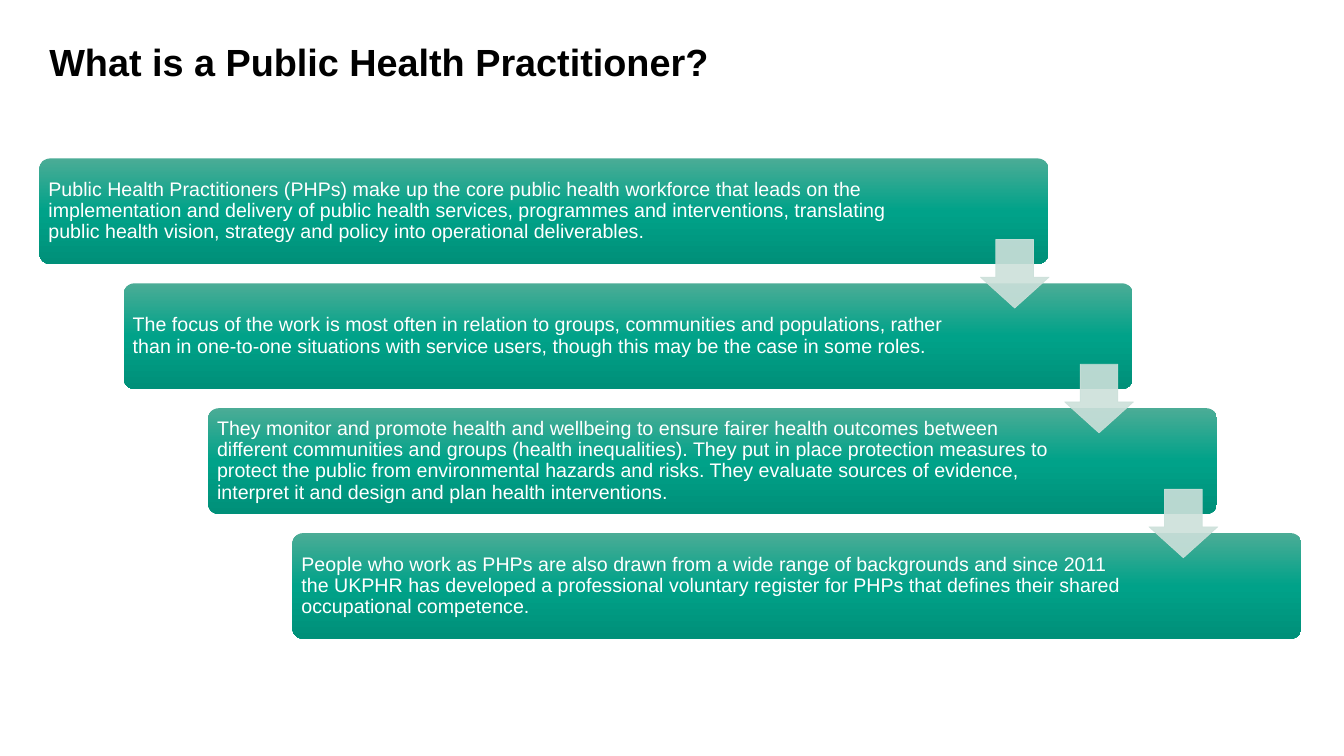
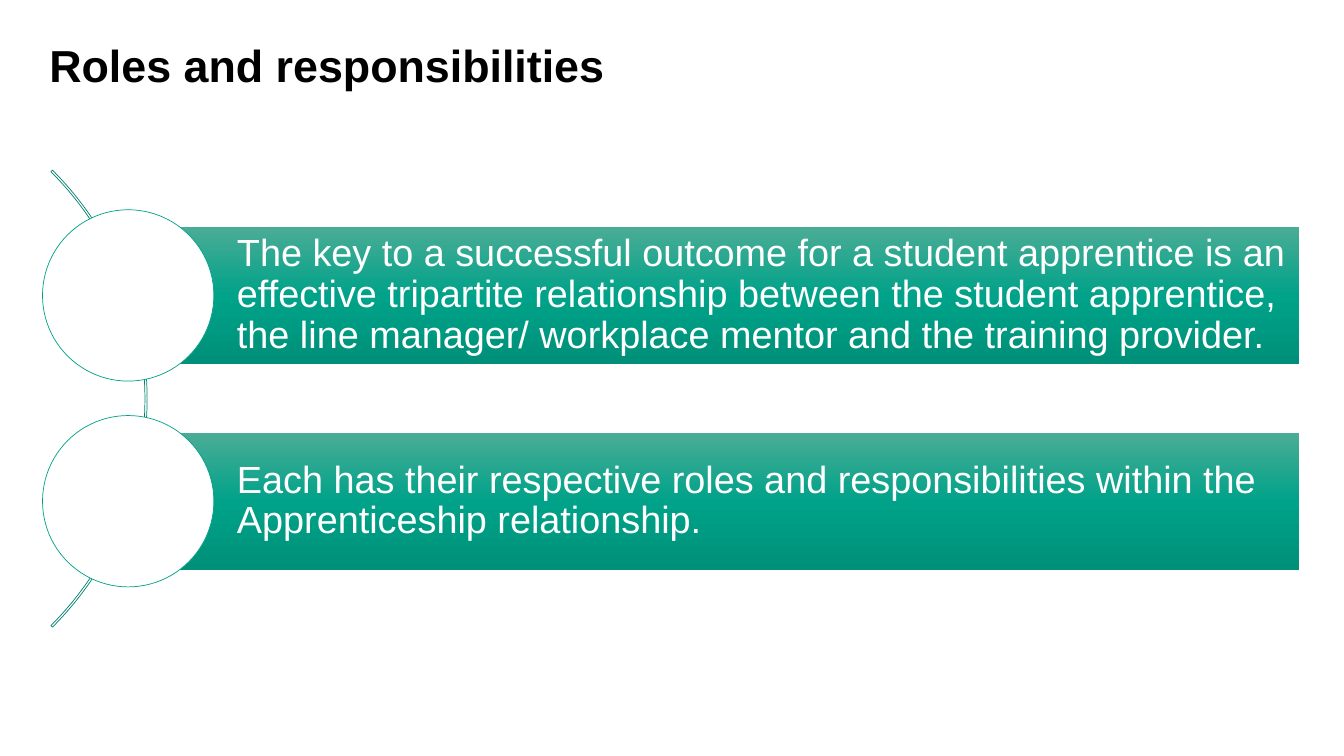
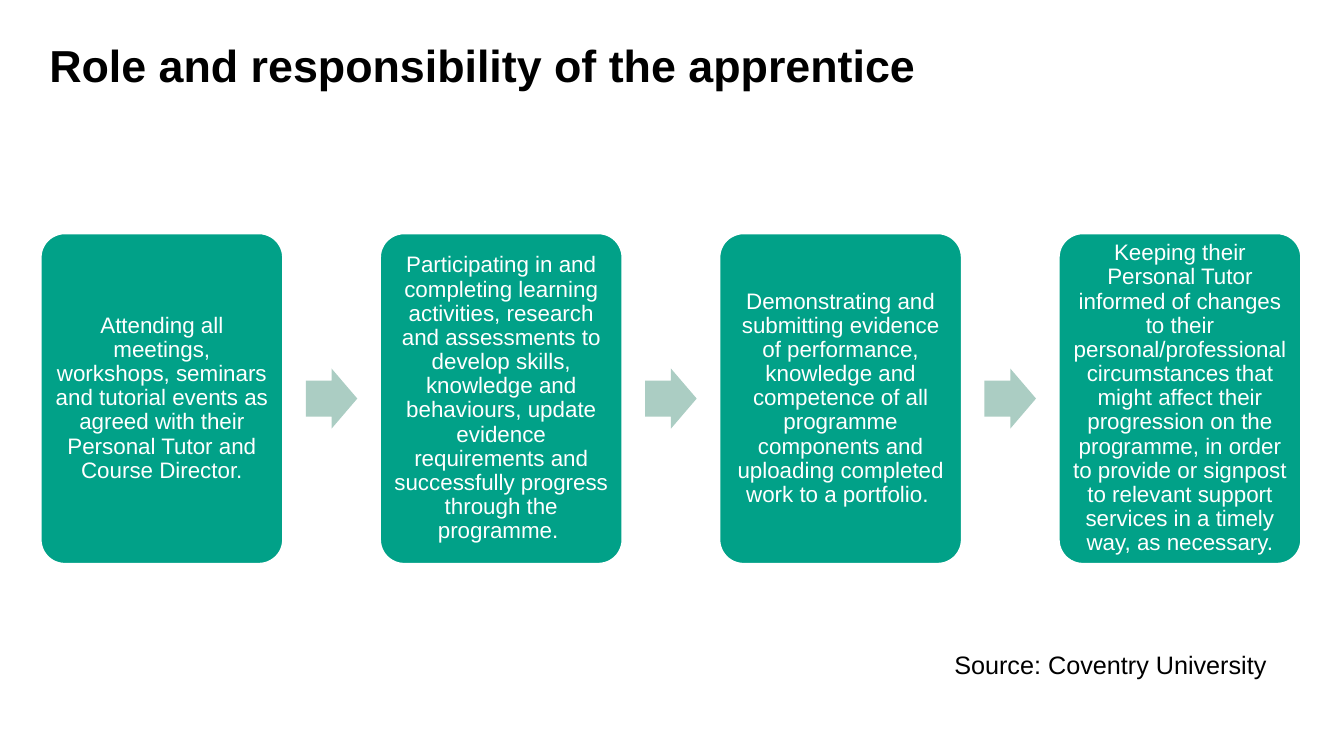
from copy import deepcopy
from dataclasses import dataclass

from lxml.etree import SubElement
from pptx import Presentation
from pptx.dml.color import RGBColor
from pptx.enum.shapes import MSO_SHAPE
from pptx.enum.text import MSO_ANCHOR, MSO_AUTO_SIZE, PP_ALIGN
from pptx.oxml.ns import qn
from pptx.shapes.autoshape import Shape
from pptx.slide import Slide
from pptx.text.text import TextFrame
from pptx.util import Pt

BLACK = RGBColor(0x00, 0x00, 0x00)
WHITE = RGBColor(0xFF, 0xFF, 0xFF)
GREEN = RGBColor(0x01, 0xA1, 0x88)
DARK_GREEN = RGBColor(0x01, 0x81, 0x6D)
ARROW_GREEN = RGBColor(0xAB, 0xCD, 0xC3)
PALE_GREEN = RGBColor(0xCC, 0xE0, 0xDA)
GRADIENT = (
    (0.0, RGBColor(0x4B, 0xAC, 0x96)),
    (0.5, RGBColor(0x00, 0xA2, 0x89)),
    (1.0, RGBColor(0x00, 0x90, 0x79)),
)
FONT = "Arial"
LINE_SPACING = 0.9


@dataclass(frozen=True)
class Box:
    left: float
    top: float
    width: float
    height: float

    @property
    def right(self) -> float:
        return self.left + self.width

    @property
    def middle(self) -> float:
        return self.top + self.height / 2

    def shifted(self, across: float, down: float) -> "Box":
        return Box(self.left + across, self.top + down, self.width, self.height)

    def lengths(self) -> tuple[Pt, Pt, Pt, Pt]:
        return Pt(self.left), Pt(self.top), Pt(self.width), Pt(self.height)


@dataclass(frozen=True)
class Insets:
    left: float
    top: float
    right: float
    bottom: float


@dataclass(frozen=True)
class Step:
    text: str
    right_inset: float


TITLE_BOX = Box(28, 28, 901.5, 66)

STEP_BOX = Box(28.2, 113.2, 720.6, 75.4)
STEP_ACROSS, STEP_DOWN = 60.24, 89.2
STEP_ARROW_SIZE, STEP_ARROW_DOWN = 49, 57.8
STEPS = (
    Step("Public Health Practitioners (PHPs) make up the core public health workforce that leads on the implementation and delivery of public health services, programmes and interventions, translating public health vision, strategy and policy into operational deliverables.", 87),
    Step("The focus of the work is most often in relation to groups, communities and populations, rather than in one-to-one situations with service users, though this may be the case in some roles.", 114),
    Step("They monitor and promote health and wellbeing to ensure fairer health outcomes between different communities and groups (health inequalities). They put in place protection measures to protect the public from environmental hazards and risks. They evaluate sources of evidence, interpret it and design and plan health interventions.", 112),
    Step("People who work as PHPs are also drawn from a wide range of backgrounds and since 2011 the UKPHR has developed a professional voluntary register for PHPs that defines their shared occupational competence.", 114),
)

ARC_BOX = Box(-356.4, 54, 461.5, 461.5)
BAR_BOX = Box(91.6, 162.1, 836.4, 97.9)
BAR_DOWN = 147
CIRCLE_SIZE = 122.4
BAR_INSETS = Insets(77.7, 5, 5, 5)
BARS = (
    "The key to a successful outcome for a student apprentice is an effective tripartite relationship between the student apprentice, the line manager/ workplace mentor and the training provider.",
    "Each has their respective roles and responsibilities within the Apprenticeship relationship.",
)

CARD_BOX = Box(29, 166.6, 173.3, 236.2)
CARD_ACROSS = 242.4
CARD_ARROW_WIDTH, CARD_ARROW_HEIGHT = 36.8, 43
CARD_INSETS = Insets(4.8, 4.8, 4.8, 4.8)
CARDS = (
    "Attending all meetings, workshops, seminars and tutorial events as agreed with their Personal Tutor and Course Director.",
    "Participating in and completing learning activities, research and assessments to develop skills, knowledge and behaviours, update evidence requirements and successfully progress through the programme. ",
    "Demonstrating and submitting evidence of performance, knowledge and competence of all programme components and uploading completed work to a portfolio. ",
    "Keeping their Personal Tutor informed of changes to their personal/professional circumstances that might affect their progression on the programme, in order to provide or signpost to relevant support services in a timely way, as necessary.",
)
SOURCE_BOX = Box(674.6, 460, 254.9, 29)


def write_text(
    frame: TextFrame,
    text: str,
    size: float,
    color: RGBColor,
    bold: bool = False,
    alignment: PP_ALIGN = PP_ALIGN.LEFT,
    line_spacing: float = LINE_SPACING,
) -> None:
    frame.word_wrap = True
    paragraph = frame.paragraphs[0]
    paragraph.alignment = alignment
    paragraph.line_spacing = line_spacing
    run = paragraph.add_run()
    run.text = text
    run.font.name = FONT
    run.font.size = Pt(size)
    run.font.bold = bold
    run.font.color.rgb = color


def write_label(
    shape: Shape,
    text: str,
    size: float,
    insets: Insets,
    alignment: PP_ALIGN = PP_ALIGN.LEFT,
) -> None:
    frame = shape.text_frame
    frame.vertical_anchor = MSO_ANCHOR.MIDDLE
    frame.margin_left = Pt(insets.left)
    frame.margin_top = Pt(insets.top)
    frame.margin_right = Pt(insets.right)
    frame.margin_bottom = Pt(insets.bottom)
    write_text(frame, text, size, WHITE, alignment=alignment)


def add_titled_slide(presentation: Presentation, title: str, size: float) -> Slide:
    slide = presentation.slides.add_slide(presentation.slide_layouts[5])
    placeholder = slide.shapes.title
    (placeholder.left, placeholder.top,
     placeholder.width, placeholder.height) = TITLE_BOX.lengths()
    frame = placeholder.text_frame
    frame.auto_size = MSO_AUTO_SIZE.NONE
    frame.vertical_anchor = MSO_ANCHOR.TOP
    write_text(frame, title, size, BLACK, bold=True)
    return slide


def add_shape(
    slide: Slide,
    kind: MSO_SHAPE,
    box: Box,
    fill: RGBColor | None = None,
    line: RGBColor | None = None,
    line_width: float = 0.5,
    adjustments: tuple[float, ...] = (),
) -> Shape:
    shape = slide.shapes.add_shape(kind, *box.lengths())
    shape.shadow.inherit = False
    for index, value in enumerate(adjustments):
        shape.adjustments[index] = value
    if fill is None:
        shape.fill.background()
    else:
        shape.fill.solid()
        shape.fill.fore_color.rgb = fill
    if line is None:
        shape.line.fill.background()
    else:
        shape.line.color.rgb = line
        shape.line.width = Pt(line_width)
    return shape


def fill_with_gradient(shape: Shape) -> None:
    shape.fill.gradient()
    shape.fill.gradient_angle = 270
    stop_list = next(shape._element.spPr.iter(qn("a:gsLst")))
    stop_list.append(deepcopy(stop_list[0]))
    for stop, (position, color) in zip(shape.fill.gradient_stops, GRADIENT):
        stop.position = position
        stop.color.rgb = color


def set_opacity(shape: Shape, percent: int) -> None:
    for color in shape._element.spPr.iter(qn("a:srgbClr")):
        SubElement(color, qn("a:alpha")).set("val", str(percent * 1000))


def build_practitioner_slide(presentation: Presentation) -> None:
    slide = add_titled_slide(presentation, "What is a Public Health Practitioner?", 27)
    boxes = [STEP_BOX.shifted(index * STEP_ACROSS, index * STEP_DOWN)
             for index in range(len(STEPS))]
    for step, box in zip(STEPS, boxes):
        shape = add_shape(slide, MSO_SHAPE.ROUNDED_RECTANGLE, box, adjustments=(0.1,))
        fill_with_gradient(shape)
        write_label(shape, step.text, 14, Insets(4.2, 4.2, step.right_inset, 4.2))
    for box in boxes[:-1]:
        arrow_box = Box(box.right - STEP_ARROW_SIZE + 0.5, box.top + STEP_ARROW_DOWN,
                        STEP_ARROW_SIZE, STEP_ARROW_SIZE)
        arrow = add_shape(slide, MSO_SHAPE.DOWN_ARROW, arrow_box, PALE_GREEN,
                          PALE_GREEN, adjustments=(0.55, 0.45))
        set_opacity(arrow, 90)


def build_roles_slide(presentation: Presentation) -> None:
    slide = add_titled_slide(presentation, "Roles and responsibilities", 32)
    add_shape(slide, MSO_SHAPE.BLOCK_ARC, ARC_BOX, line=DARK_GREEN,
              adjustments=(189, 27, 0.0034))
    for index, text in enumerate(BARS):
        box = BAR_BOX.shifted(0, index * BAR_DOWN)
        bar = add_shape(slide, MSO_SHAPE.RECTANGLE, box)
        fill_with_gradient(bar)
        write_label(bar, text, 27, BAR_INSETS)
        circle_box = Box(box.left - CIRCLE_SIZE / 2, box.middle - CIRCLE_SIZE / 2,
                         CIRCLE_SIZE, CIRCLE_SIZE)
        add_shape(slide, MSO_SHAPE.OVAL, circle_box, WHITE, GREEN)


def build_apprentice_slide(presentation: Presentation) -> None:
    slide = add_titled_slide(presentation, "Role and responsibility of the apprentice", 32)
    gap = CARD_ACROSS - CARD_BOX.width
    for index, text in enumerate(CARDS):
        box = CARD_BOX.shifted(index * CARD_ACROSS, 0)
        if index:
            arrow_box = Box(box.left - (gap + CARD_ARROW_WIDTH) / 2,
                            box.middle - CARD_ARROW_HEIGHT / 2,
                            CARD_ARROW_WIDTH, CARD_ARROW_HEIGHT)
            add_shape(slide, MSO_SHAPE.RIGHT_ARROW, arrow_box, ARROW_GREEN,
                      adjustments=(0.6, 0.5))
        card = add_shape(slide, MSO_SHAPE.ROUNDED_RECTANGLE, box, GREEN, WHITE, 1.5, (0.1,))
        write_label(card, text, 16, CARD_INSETS, PP_ALIGN.CENTER)
    source = slide.shapes.add_textbox(*SOURCE_BOX.lengths())
    source.text_frame.auto_size = MSO_AUTO_SIZE.SHAPE_TO_FIT_TEXT
    write_text(source.text_frame, "Source: Coventry University", 18, BLACK, line_spacing=1.0)


def main() -> None:
    presentation = Presentation()
    presentation.slide_width = Pt(960)
    presentation.slide_height = Pt(540)
    build_practitioner_slide(presentation)
    build_roles_slide(presentation)
    build_apprentice_slide(presentation)
    presentation.save("out.pptx")


if __name__ == "__main__":
    main()
